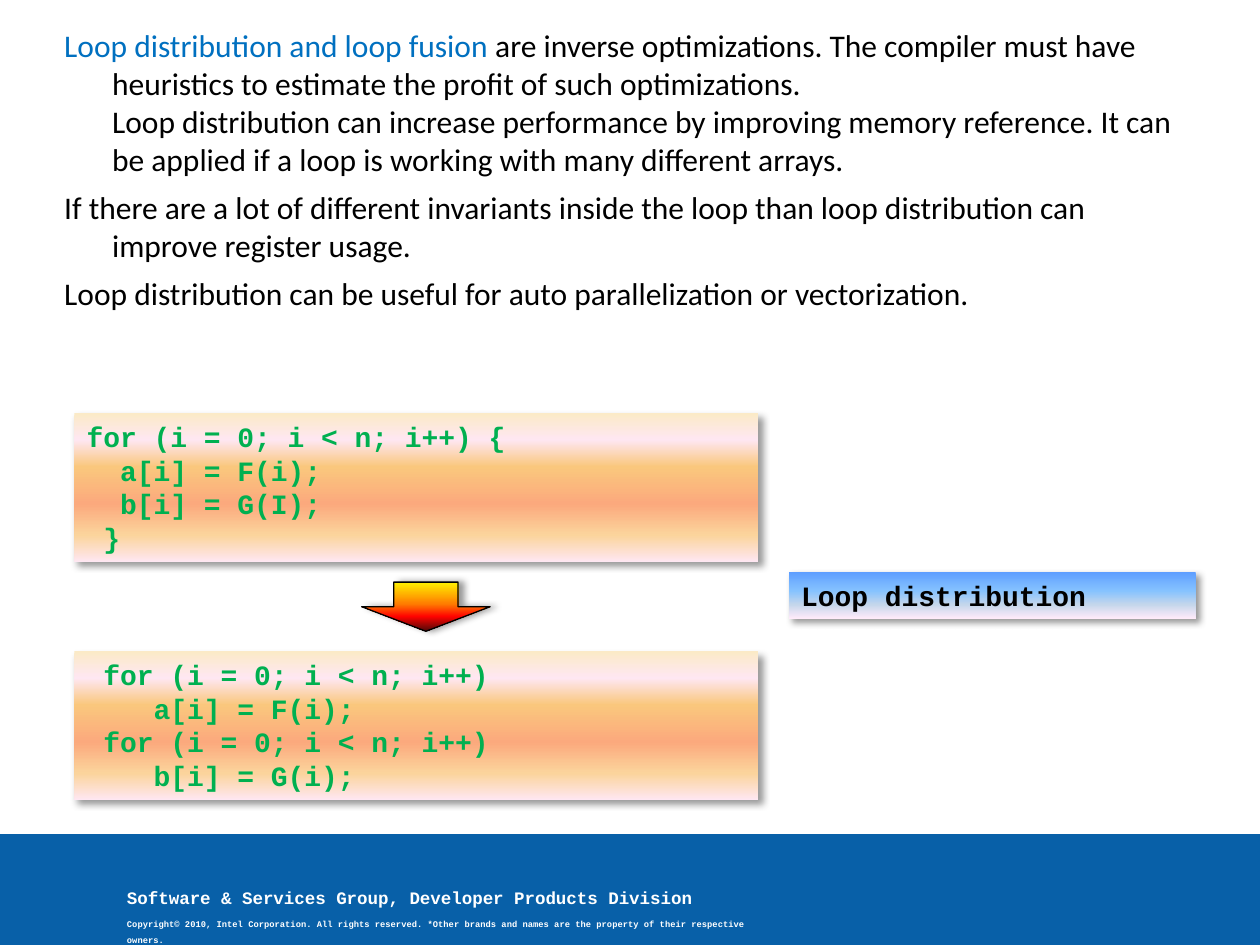
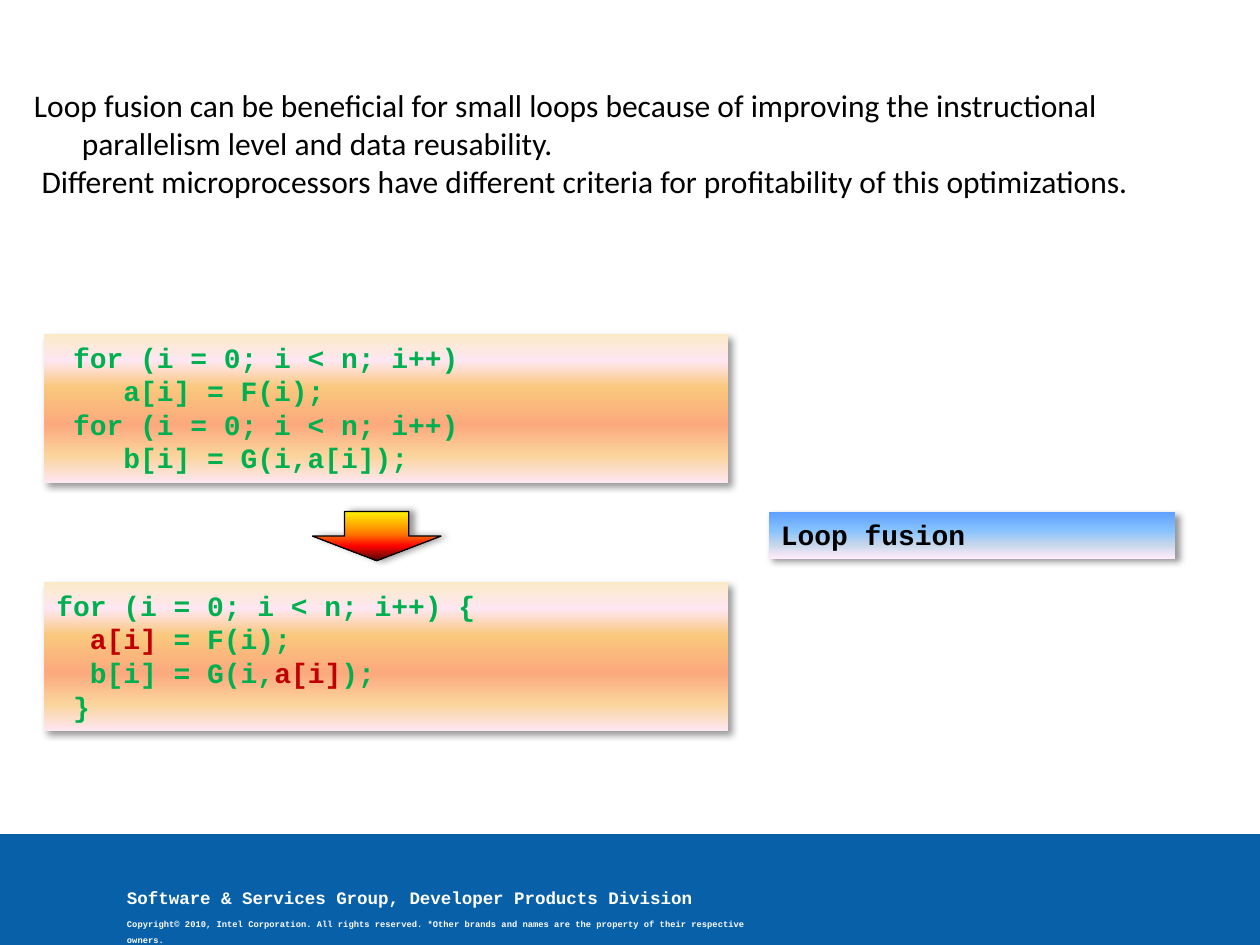
"""Build two slides on loop distribution and loop fusion."""
from lxml.etree import SubElement
from pptx import Presentation
from pptx.dml.color import RGBColor as Rgb
from pptx.enum.shapes import MSO_SHAPE as Preset
from pptx.enum.text import MSO_ANCHOR as Anchor, MSO_AUTO_SIZE as AutoSize, PP_ALIGN as Align
from pptx.oxml.ns import qn
from pptx.util import Inches, Pt

WIDTH, HEIGHT = Inches(10), Inches(7.5)
COLOURS = {"band": "0860A8", "white": "FFFFFF", "black": "000000",
           "code": "00B050", "shared": "C00000", "topic": "0070C0"}
GRADIENTS = {
    "code": {0: "FBEAC7", 18: "FEE7F2", 36: "FAC77D", 61: "FBA97D", 82: "FBD49C", 100: "FEE7F2"},
    "arrow": {0: "FFF200", 45: "FF7A00", 70: "FF0300", 100: "4D0808"},
    "label": {0: "5E9EFF", 40: "85C2FF", 70: "C4D6EB", 100: "FFEBFA"},
}
CODE_FONT, BODY_FONT = "Courier New", "Calibri"
CODE_SIZE = (54.3, 15.73)
ARROW_SIZE = (10.2, 5.2)
LABEL_SIZE = (32.3, 4.93)
HANGING = 0.38


def place(left, top, width, height):
    """Turn percentages of the slide into lengths."""
    return (int(WIDTH * left / 100), int(HEIGHT * top / 100),
            int(WIDTH * width / 100), int(HEIGHT * height / 100))


def add_spans(para, spans, font, size, bold=False):
    """Add (text, colour name) spans, with a line break at each newline."""
    for text, colour in spans:
        for number, line in enumerate(text.split("\n")):
            if number:
                para.add_line_break()
            span = para.add_run()
            span.text = line
            span.font.name, span.font.size, span.font.bold = font, Pt(size), bold
            span.font.color.rgb = Rgb.from_string(COLOURS[colour])


def next_para(frame, number):
    """Return the first paragraph of a frame, or a new one."""
    return frame.add_paragraph() if number else frame.paragraphs[0]


def add_glossy(slide, preset, area, gradient, shadow_angle=45):
    """Add a shape with a downward gradient and a soft shadow."""
    shape = slide.shapes.add_shape(preset, *place(*area))
    shape.fill.gradient()
    shape.fill.gradient_angle = 270
    shape.line.fill.background()
    shape.shadow.inherit = False
    properties = shape.element.spPr
    stops = properties.find(".//" + qn("a:gsLst"))
    for stop in list(stops):
        stops.remove(stop)
    for share, colour in GRADIENTS[gradient].items():
        stop = SubElement(stops, qn("a:gs"), pos=str(share * 1000))
        SubElement(stop, qn("a:srgbClr"), val=colour)
    shadow = SubElement(properties.find(qn("a:effectLst")), qn("a:outerShdw"),
                        blurRad=str(Pt(4)), dist=str(Pt(3)),
                        dir=str(shadow_angle * 60000), algn="tl", rotWithShape="0")
    tint = SubElement(shadow, qn("a:srgbClr"), val=COLOURS["black"])
    SubElement(tint, qn("a:alpha"), val="40000")
    return shape


def add_panel(slide, area, gradient, lines):
    """Add a glossy box of bold monospaced lines."""
    frame = add_glossy(slide, Preset.RECTANGLE, area, gradient).text_frame
    frame.word_wrap = True
    frame.auto_size = AutoSize.SHAPE_TO_FIT_TEXT
    frame.vertical_anchor = Anchor.TOP
    for number, spans in enumerate(lines):
        para = next_para(frame, number)
        para.alignment = Align.LEFT
        add_spans(para, spans, CODE_FONT, 16, True)


def add_code(slide, left, top, *lines):
    """Add a code box; a line is a string or a list of spans."""
    spans = [[(line, "code")] if isinstance(line, str) else line for line in lines]
    add_panel(slide, (left, top, *CODE_SIZE), "code", spans)


def add_arrow(slide, left, top):
    """Add the outlined arrow that leads from one code box to the next."""
    arrow = add_glossy(slide, Preset.DOWN_ARROW, (left, top, *ARROW_SIZE), "arrow", 0)
    arrow.line.color.rgb = Rgb.from_string(COLOURS["black"])
    arrow.line.width = Pt(0.75)


def add_label(slide, left, top, text):
    """Add the name of the optimization."""
    add_panel(slide, (left, top, *LABEL_SIZE), "label", [[(text, "black")]])


def add_body(slide, area, paragraphs):
    """Add hanging paragraphs given as (spans, first indent, space before, line spacing)."""
    frame = slide.shapes.add_textbox(*place(*area)).text_frame
    frame.word_wrap = True
    frame.margin_left = frame.margin_right = frame.margin_top = frame.margin_bottom = 0
    for number, (spans, indent, before, spacing) in enumerate(paragraphs):
        para = next_para(frame, number)
        properties = para._p.get_or_add_pPr()
        properties.set("marL", str(Inches(HANGING)))
        properties.set("indent", str(Inches(indent)))
        para.line_spacing = spacing
        para.space_before = Pt(before if number else 0)
        add_spans(para, spans, BODY_FONT, 18)


def add_footer(slide):
    """Add the blue band and its two lines of text."""
    band = slide.shapes.add_shape(Preset.RECTANGLE, *place(0, 88.27, 100, 11.73))
    band.shadow.inherit = False
    band.fill.solid()
    band.fill.fore_color.rgb = Rgb.from_string(COLOURS["band"])
    band.line.fill.background()
    frame = slide.shapes.add_textbox(*place(9.1, 92.8, 51.3, 6)).text_frame
    frame.word_wrap = False
    lines = (
        ("Software & Services Group, Developer Products Division", 10, 1.2),
        ("Copyright© 2010, Intel Corporation. All rights reserved. "
         "*Other brands and names are the property of their respective owners.", 5, 1.5),
    )
    for number, (text, size, spacing) in enumerate(lines):
        para = next_para(frame, number)
        para.line_spacing = spacing
        para.space_before = Pt(3.1 * number)
        add_spans(para, [(text, "white")], CODE_FONT, size, True)


def add_page(deck):
    """Add a blank slide with the footer."""
    page = deck.slides.add_slide(deck.slide_layouts[6])
    add_footer(page)
    return page


def build_distribution(deck):
    """Build the slide on loop distribution."""
    page = add_page(deck)
    paragraphs = (
        [("Loop distribution and loop fusion ", "topic"),
         ("are inverse optimizations. The compiler must have heuristics to estimate "
          "the profit of such optimizations.\nLoop distribution can increase performance "
          "by improving memory reference. It can be applied if a loop is working with "
          "many different arrays.", "black")],
        [("If there are a lot of different invariants inside the loop than loop "
          "distribution can improve register usage.", "black")],
        [("Loop distribution can be useful for auto parallelization or vectorization.",
          "black")],
    )
    add_body(page, (5.1, 2.8, 89.8, 39.87),
             [(spans, -HANGING, 6, 1.0) for spans in paragraphs])
    add_code(page, 5.9, 43.73, "for (i = 0; i < n; i++) {",
             "  a[i] = F(i);", "  b[i] = G(I);", " }")
    add_code(page, 5.9, 68.93, " for (i = 0; i < n; i++)", "    a[i] = F(i);",
             " for (i = 0; i < n; i++)", "    b[i] = G(i);")
    add_arrow(page, 28.7, 61.6)
    add_label(page, 62.6, 60.53, "Loop distribution")


def build_fusion(deck):
    """Build the slide on loop fusion."""
    page = add_page(deck)
    add_body(page, (2.7, 9.07, 90, 15.73), [
        ([("Loop fusion can be beneficial for small loops because of improving the "
           "instructional parallelism level and data reusability.", "black")],
         -HANGING, 6, 1.0),
        ([("Different microprocessors have different criteria for profitability of "
           "this optimizations.", "black")], 0.06 - HANGING, 4.5, 0.8),
    ])
    reused = ("a[i]", "shared")
    add_code(page, 3.5, 61.6, "for (i = 0; i < n; i++) {",
             [("  ", "code"), reused, (" = F(i);", "code")],
             [("  b[i] = G(i,", "code"), reused, (");", "code")], " }")
    add_code(page, 3.5, 35.33, " for (i = 0; i < n; i++)", "    a[i] = F(i);",
             " for (i = 0; i < n; i++)", "    b[i] = G(i,a[i]);")
    add_arrow(page, 24.8, 54.13)
    add_label(page, 61, 54.13, "Loop fusion")


def main():
    """Build and save the deck."""
    deck = Presentation()
    deck.slide_width, deck.slide_height = WIDTH, HEIGHT
    build_distribution(deck)
    build_fusion(deck)
    deck.save("out.pptx")


if __name__ == "__main__":
    main()
